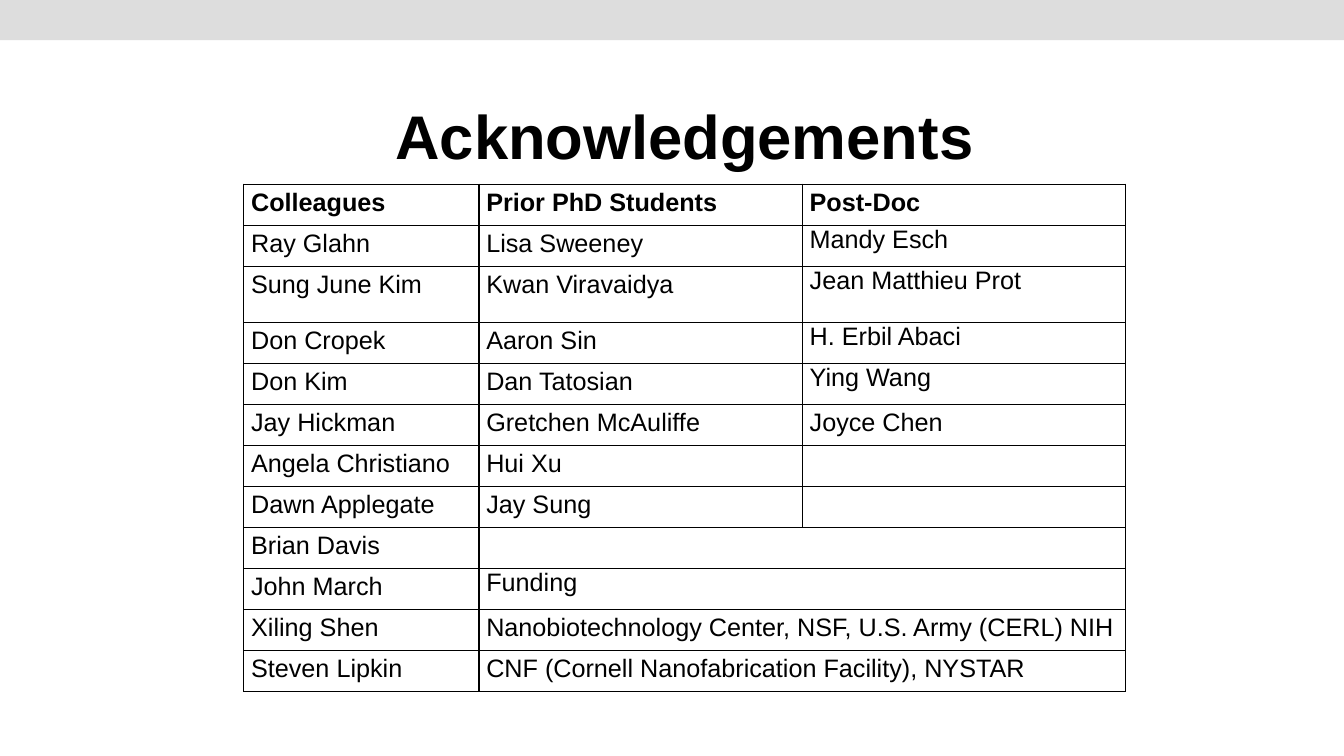
from dataclasses import dataclass
from typing import Any

from lxml.etree import SubElement
from pptx import Presentation
from pptx.dml.color import RGBColor
from pptx.enum.shapes import MSO_SHAPE
from pptx.enum.text import MSO_ANCHOR, MSO_AUTO_SIZE, PP_ALIGN
from pptx.oxml import parse_xml
from pptx.oxml.ns import nsdecls, qn
from pptx.util import Pt

BLACK = RGBColor(0x00, 0x00, 0x00)
BAND_GREY = RGBColor(0xDD, 0xDD, 0xDD)

LEFT, WIDTH = Pt(174.2), Pt(630)
COLUMN_WIDTHS = (168, 231, 231)
ROW_HEIGHT, TALL_ROW_HEIGHT = 29.3, 40
LOOSE = 1.15

CELL_FORMAT = {
    "margin_left": Pt(5.2), "margin_right": Pt(5.2),
    "margin_top": 0, "margin_bottom": 0,
    "vertical_anchor": MSO_ANCHOR.TOP,
}
TITLE_FORMAT = {
    "margin_left": Pt(7.2), "margin_right": Pt(7.2),
    "margin_top": Pt(3.6), "margin_bottom": Pt(3.6),
    "vertical_anchor": MSO_ANCHOR.MIDDLE,
    "word_wrap": True, "auto_size": MSO_AUTO_SIZE.NONE,
}
TITLE_PLACE = {"left": LEFT, "top": Pt(66), "width": WIDTH, "height": Pt(60)}


@dataclass(frozen=True)
class Entry:
    text: str = ""
    spacing: float = LOOSE
    bold: bool = False


@dataclass(frozen=True)
class Row:
    entries: tuple[Entry, ...]
    height: float = ROW_HEIGHT


def heading(text: str) -> Entry:
    return Entry(text, bold=True)


def tight(text: str) -> Entry:
    return Entry(text, spacing=1.0)


# A row with two entries joins its last two columns
ROWS = (
    Row((heading("Colleagues"), heading("Prior PhD Students"), heading("Post-Doc"))),
    Row((Entry("Ray Glahn"), Entry("Lisa Sweeney"), tight("Mandy Esch"))),
    Row((Entry("Sung June Kim"), Entry("Kwan Viravaidya"),
         tight("Jean Matthieu Prot")), TALL_ROW_HEIGHT),
    Row((Entry("Don Cropek"), Entry("Aaron Sin"), tight("H. Erbil Abaci"))),
    Row((Entry("Don Kim"), Entry("Dan Tatosian"), tight("Ying Wang"))),
    Row((Entry("Jay Hickman"), Entry("Gretchen McAuliffe"), Entry("Joyce Chen"))),
    Row((Entry("Angela Christiano"), Entry("Hui Xu"), Entry())),
    Row((Entry("Dawn Applegate"), Entry("Jay Sung"), Entry())),
    Row((Entry("Brian Davis"), Entry())),
    Row((Entry("John March"), tight("Funding"))),
    Row((Entry("Xiling Shen"),
         Entry("Nanobiotechnology Center, NSF, U.S. Army (CERL) NIH"))),
    Row((Entry("Steven Lipkin"),
         Entry("CNF (Cornell Nanofabrication Facility), NYSTAR"))),
)


def apply_format(target: Any, values: dict[str, Any]) -> None:
    for name, value in values.items():
        setattr(target, name, value)


def format_font(font: Any, size: float, bold: bool) -> None:
    apply_format(font, {"name": "Arial", "size": Pt(size), "bold": bold})
    font.color.rgb = BLACK


def add_borders(cell: Any) -> None:
    properties = cell._tc.get_or_add_tcPr()
    for position, side in enumerate(("lnL", "lnR", "lnT", "lnB")):
        border = parse_xml(f'<a:{side} {nsdecls("a")} w="{Pt(1)}"/>')
        fill = SubElement(border, qn("a:solidFill"))
        SubElement(fill, qn("a:srgbClr"), val=str(BLACK))
        properties.insert(position, border)


def fill_cell(cell: Any, entry: Entry) -> None:
    apply_format(cell, CELL_FORMAT)
    paragraph = cell.text_frame.paragraphs[0]
    paragraph.line_spacing = entry.spacing
    if entry.text:
        run = paragraph.add_run()
        run.text = entry.text
        format_font(run.font, 18, entry.bold)


def add_top_band(slide: Any, width: int) -> None:
    band = slide.shapes.add_shape(MSO_SHAPE.RECTANGLE, 0, 0, width, Pt(28.8))
    band.shadow.inherit = False
    band.fill.solid()
    band.fill.fore_color.rgb = BAND_GREY
    band.line.fill.background()


def add_title(slide: Any, text: str) -> None:
    title = slide.shapes.title
    apply_format(title, TITLE_PLACE)
    apply_format(title.text_frame, TITLE_FORMAT)
    paragraph = title.text_frame.paragraphs[0]
    paragraph.alignment = PP_ALIGN.CENTER
    run = paragraph.add_run()
    run.text = text
    format_font(run.font, 44, True)


def add_people_table(slide: Any) -> None:
    height = Pt(sum(row.height for row in ROWS))
    people = slide.shapes.add_table(
        len(ROWS), len(COLUMN_WIDTHS), LEFT, Pt(131.6), WIDTH, height).table
    apply_format(people, {"first_row": False, "horz_banding": False})
    for column, width in zip(people.columns, COLUMN_WIDTHS):
        column.width = Pt(width)
    for index, row in enumerate(ROWS):
        people.rows[index].height = Pt(row.height)
        if len(row.entries) < len(COLUMN_WIDTHS):
            people.cell(index, 1).merge(people.cell(index, 2))
        for column, entry in enumerate(row.entries):
            fill_cell(people.cell(index, column), entry)
    for cell in people.iter_cells():
        cell.fill.background()
        add_borders(cell)


def main() -> None:
    deck = Presentation()
    apply_format(deck, {"slide_width": Pt(960), "slide_height": Pt(540)})
    slide = deck.slides.add_slide(deck.slide_layouts[5])
    add_top_band(slide, deck.slide_width)
    add_title(slide, "Acknowledgements")
    add_people_table(slide)
    deck.save("out.pptx")


if __name__ == "__main__":
    main()
